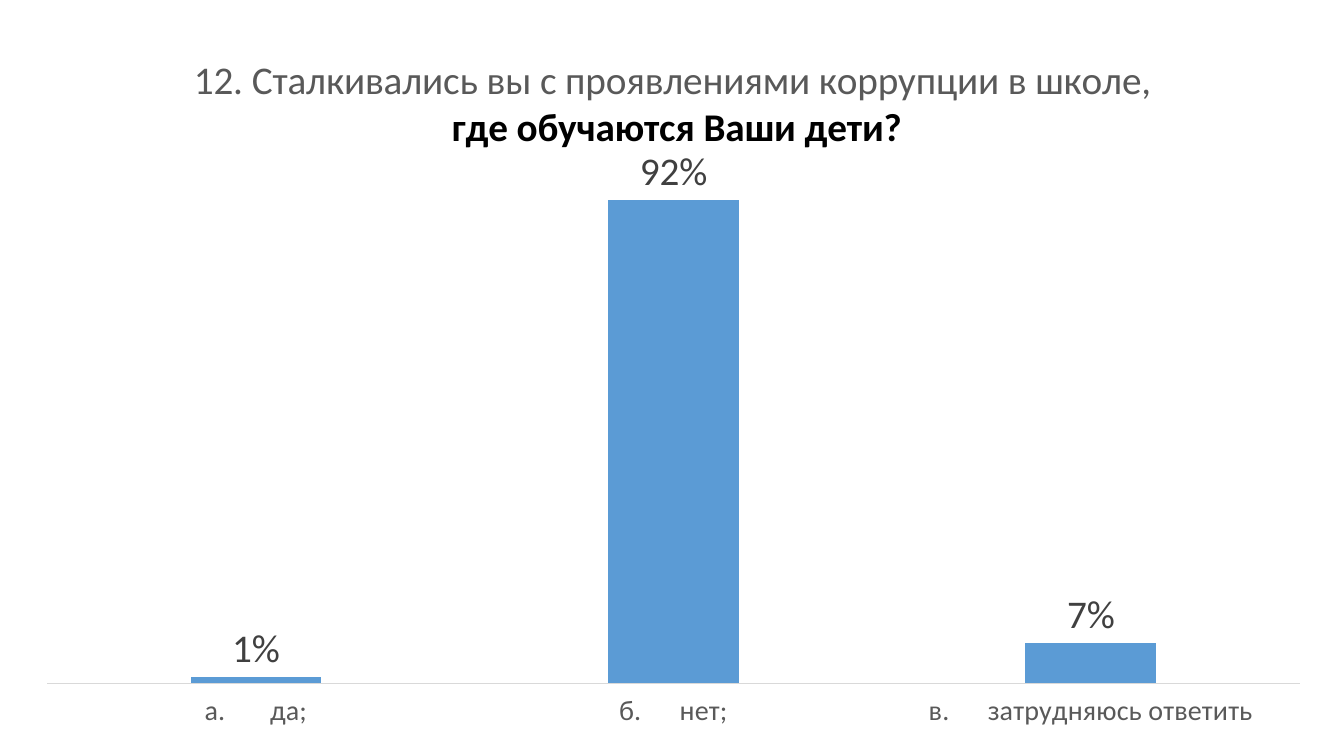
from pptx import Presentation
from pptx.chart.data import CategoryChartData
from pptx.dml.color import RGBColor
from pptx.enum.chart import XL_CHART_TYPE as ChartType
from pptx.enum.chart import XL_LABEL_POSITION as LabelPosition
from pptx.enum.chart import XL_TICK_LABEL_POSITION as TickLabelPosition
from pptx.enum.chart import XL_TICK_MARK as TickMark
from pptx.oxml import parse_xml
from pptx.oxml.ns import nsdecls, qn
from pptx.util import Inches, Pt

# Content
FONT = "Calibri"
TITLE_LINES = [
    ("12. Сталкивались вы с проявлениями коррупции в школе,", "595959", False),
    (" где обучаются Ваши дети?", "000000", True),
]
# Letter, number of non-breaking spaces, answer, share
ANSWERS = [
    ("а.", 6, " да;", 0.01),
    ("б.", 5, " нет;", 0.84),
    ("в.", 5, " затрудняюсь ответить", 0.07),
]
CUSTOM_LABELS = {1: "92%"}


def color(value):
    return RGBColor.from_string(value)


def format_font(font, size, fill, bold=False):
    font.name = FONT
    font.size = Pt(size)
    font.bold = bold
    font.color.rgb = color(fill)


def add_text(paragraph, text, **style):
    run = paragraph.add_run()
    run.text = text
    format_font(run.font, **style)


def make_layout(**fractions):
    """Manual chart layout from fractions of the chart size."""
    target = '<c:layoutTarget val="inner"/>' if "w" in fractions else ""
    modes = "".join(f'<c:{key}Mode val="edge"/>' for key in fractions if key in "xy")
    values = "".join(f'<c:{key} val="{value}"/>' for key, value in fractions.items())
    return parse_xml(
        f'<c:layout {nsdecls("c")}><c:manualLayout>{target}{modes}{values}'
        "</c:manualLayout></c:layout>"
    )


def drop_layout(element):
    for layout in element.findall(qn("c:layout")):
        element.remove(layout)


def add_answer_chart(slide):
    data = CategoryChartData(number_format="0%")
    data.categories = [
        letter + chr(160) * gap + answer for letter, gap, answer, share in ANSWERS
    ]
    data.add_series("Series 1", [share for *label, share in ANSWERS])
    chart = slide.shapes.add_chart(
        ChartType.COLUMN_CLUSTERED,
        Inches(0.21), Inches(0.24), Inches(12.94), Inches(7.03), data,
    ).chart
    format_font(chart.font, size=10, fill="000000")
    chart.has_legend = False
    return chart


def add_title(chart):
    chart.has_title = True
    title = chart.chart_title
    title.include_in_layout = False
    frame = title.text_frame
    for index, (text, fill, bold) in enumerate(TITLE_LINES):
        paragraph = frame.paragraphs[0] if index == 0 else frame.add_paragraph()
        add_text(paragraph, text, size=28, fill=fill, bold=bold)
    element = title._element
    drop_layout(element)
    element.find(qn("c:tx")).addnext(make_layout(x=0.13, y=0.04))


def format_axes(chart):
    category_axis = chart.category_axis
    category_axis.major_tick_mark = TickMark.NONE
    category_axis.minor_tick_mark = TickMark.NONE
    category_axis.tick_label_position = TickLabelPosition.LOW
    category_axis.format.line.color.rgb = color("D9D9D9")
    category_axis.format.line.width = Pt(0.75)
    format_font(category_axis.tick_labels.font, size=20, fill="595959")

    value_axis = chart.value_axis
    value_axis.minimum_scale = 0
    value_axis.maximum_scale = 0.9
    value_axis.has_major_gridlines = False
    value_axis.visible = False


def format_columns(chart):
    plot = chart.plots[0]
    plot.gap_width = 219
    plot.overlap = -27
    plot.vary_by_categories = False
    series = plot.series[0]
    series.format.fill.solid()
    series.format.fill.fore_color.rgb = color("5B9BD5")

    label_style = {"size": 28, "fill": "404040"}
    labels = series.data_labels
    labels.show_value = True
    labels.number_format = "0%"
    labels.number_format_is_linked = False
    labels.position = LabelPosition.OUTSIDE_END
    format_font(labels.font, **label_style)
    for index, text in CUSTOM_LABELS.items():
        label = series.points[index].data_label
        add_text(label.text_frame.paragraphs[0], text, **label_style)
        label.position = LabelPosition.OUTSIDE_END


def place_plot(chart):
    plot_area = chart._chartSpace.find(qn("c:chart")).find(qn("c:plotArea"))
    drop_layout(plot_area)
    plot_area.insert(0, make_layout(x=0.02, y=0.2, w=0.96, h=0.73))


def main():
    presentation = Presentation()
    presentation.slide_width = Inches(13.33)
    presentation.slide_height = Inches(7.5)
    slide = presentation.slides.add_slide(presentation.slide_layouts[6])
    chart = add_answer_chart(slide)
    add_title(chart)
    format_axes(chart)
    format_columns(chart)
    place_plot(chart)
    presentation.save("out.pptx")


if __name__ == "__main__":
    main()
